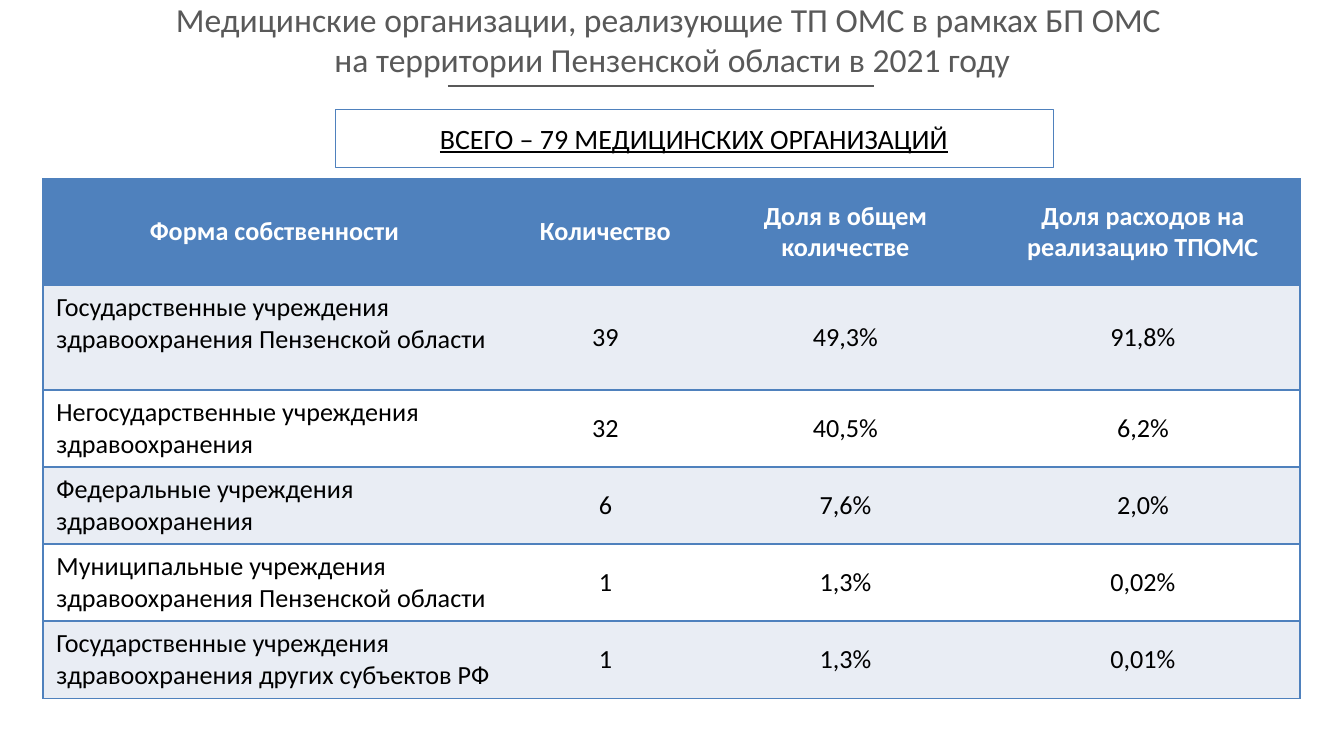
from lxml.etree import SubElement
from pptx import Presentation
from pptx.dml.color import RGBColor
from pptx.enum.shapes import MSO_CONNECTOR, MSO_SHAPE
from pptx.enum.text import MSO_ANCHOR, MSO_AUTO_SIZE, PP_ALIGN
from pptx.oxml import parse_xml
from pptx.oxml.ns import nsdecls, qn
from pptx.util import Pt

PX = 914400 / 134.4
BLUE, BAND, WHITE, GRAY, BLACK = "4F81BD", "E9EDF4", "FFFFFF", "595959", "000000"
NO_STYLE = "{2D5ABB26-0587-4C30-8999-92F81FD0307C}"

TITLE = ("Медицинские организации, реализующие ТП ОМС в рамках БП ОМС \v"
         "на территории Пензенской области в 2021 году")
TOTAL = "ВСЕГО – 79 МЕДИЦИНСКИХ ОРГАНИЗАЦИЙ"
ROWS = [
    ("Форма собственности", "Количество", "Доля в общем количестве",
     "Доля расходов на реализацию ТПОМС"),
    ("Государственные учреждения здравоохранения Пензенской области",
     "39", "49,3%", "91,8%"),
    ("Негосударственные учреждения здравоохранения", "32", "40,5%", "6,2%"),
    ("Федеральные учреждения здравоохранения", "6", "7,6%", "2,0%"),
    ("Муниципальные учреждения здравоохранения Пензенской области",
     "1", "1,3%", "0,02%"),
    ("Государственные учреждения здравоохранения других субъектов РФ",
     "1", "1,3%", "0,01%"),
]
COL_WIDTHS = [463, 199, 281, 314]
ROW_HEIGHTS = [106, 105, 77, 77, 77, 77]


def px(*values):
    return [round(v * PX) for v in values]


def rgb(color):
    return RGBColor.from_string(color)


def style(p, size, color, align=PP_ALIGN.CENTER, bold=False, underline=False):
    p.alignment = align
    f = p.font
    f.name, f.size, f.bold, f.underline = "Calibri", Pt(size), bold, underline
    f.color.rgb = rgb(color)


def add_borders(cell, sides):
    """Draw a blue 1 pt line on the given sides; call before setting the fill."""
    tcPr = cell._tc.get_or_add_tcPr()
    for side in sides:
        tcPr.append(parse_xml(
            f'<a:ln{side} {nsdecls("a")} w="12700"><a:solidFill>'
            f'<a:srgbClr val="{BLUE}"/></a:solidFill></a:ln{side}>'))


def add_title(s):
    title = s.shapes.title
    title.left, title.top, title.width, title.height = px(22, -4, 1301, 86)
    tf = title.text_frame
    tf.text = TITLE
    tf.auto_size = MSO_AUTO_SIZE.NONE
    tf.vertical_anchor = MSO_ANCHOR.MIDDLE
    style(tf.paragraphs[0], 18, GRAY)

    rule = s.shapes.add_connector(MSO_CONNECTOR.STRAIGHT, *px(448, 86, 874, 86))
    rule.line.color.rgb = rgb(GRAY)
    rule.line.width = Pt(1)
    SubElement(rule._element.spPr, qn("a:effectLst"))


def add_total(s):
    box = s.shapes.add_shape(MSO_SHAPE.RECTANGLE, *px(335, 109, 718, 58))
    box.shadow.inherit = False
    box.fill.solid()
    box.fill.fore_color.rgb = rgb(WHITE)
    box.line.color.rgb = rgb(BLUE)
    box.line.width = Pt(0.25)
    tf = box.text_frame
    tf.text = TOTAL
    tf.vertical_anchor = MSO_ANCHOR.MIDDLE
    style(tf.paragraphs[0], 15, BLACK, underline=True)


def add_ownership_table(s):
    frame = s.shapes.add_table(
        len(ROWS), len(COL_WIDTHS),
        *px(43, 179, sum(COL_WIDTHS), sum(ROW_HEIGHTS)))
    table = frame.table
    table._tbl.tblPr.find(qn("a:tableStyleId")).text = NO_STYLE
    for column, width in zip(table.columns, COL_WIDTHS):
        column.width = px(width)[0]
    last = len(COL_WIDTHS) - 1
    for i, values in enumerate(ROWS):
        table.rows[i].height = px(ROW_HEIGHTS[i])[0]
        header = i == 0
        fill = BLUE if header else BAND if i % 2 else WHITE
        for j, text in enumerate(values):
            cell = table.cell(i, j)
            cell.text = text
            label = j == 0 and not header
            cell.vertical_anchor = MSO_ANCHOR.TOP if label else MSO_ANCHOR.MIDDLE
            style(cell.text_frame.paragraphs[0], 14, WHITE if header else BLACK,
                  PP_ALIGN.LEFT if label else PP_ALIGN.CENTER, bold=header)
            add_borders(cell, {0: "LTB", last: "RTB"}.get(j, "TB"))
            cell.fill.solid()
            cell.fill.fore_color.rgb = rgb(fill)


def main():
    prs = Presentation()
    prs.slide_width, prs.slide_height = px(1344, 756)
    s = prs.slides.add_slide(prs.slide_layouts[5])
    add_title(s)
    add_total(s)
    add_ownership_table(s)
    prs.save("out.pptx")


if __name__ == "__main__":
    main()
